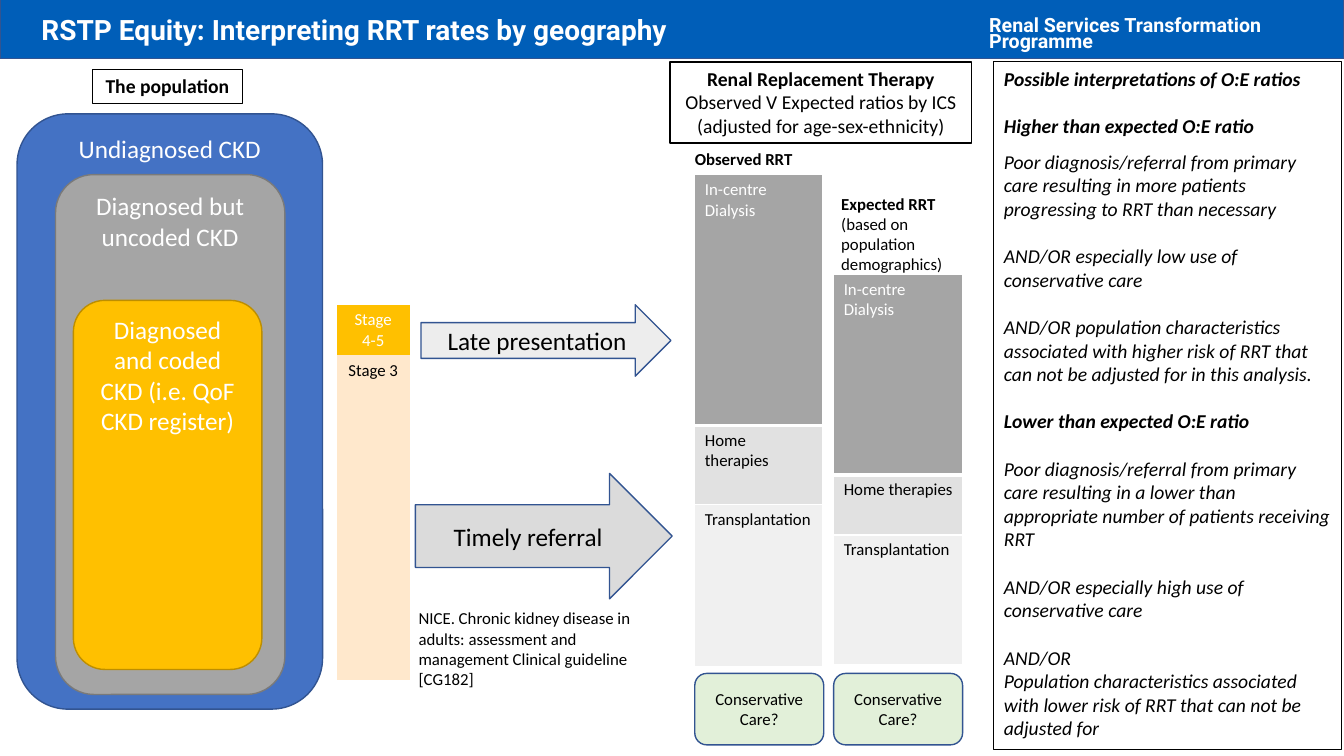
from lxml.etree import SubElement
from pptx import Presentation
from pptx.dml.color import RGBColor
from pptx.enum.shapes import MSO_SHAPE
from pptx.enum.text import MSO_ANCHOR, MSO_AUTO_SIZE, PP_ALIGN
from pptx.oxml.ns import qn
from pptx.util import Cm, Pt

WHITE = RGBColor(0xFF, 0xFF, 0xFF)
BLACK = RGBColor(0, 0, 0)
BAND = RGBColor(0x00, 0x5E, 0xB8)
NAVY = RGBColor(0x32, 0x54, 0x91)
BLUE = RGBColor(0x44, 0x72, 0xC4)
GREY = RGBColor(0xA5, 0xA5, 0xA5)
DARK = RGBColor(0x7A, 0x7A, 0x7A)
GOLD = RGBColor(0xFF, 0xC0, 0x00)
BROWN = RGBColor(0xBD, 0x8E, 0x00)
PEACH = RGBColor(0xFF, 0xE8, 0xCC)
SILVER = RGBColor(0xE1, 0xE1, 0xE1)
PALE = RGBColor(0xF0, 0xF0, 0xF0)
STEEL = RGBColor(0xDB, 0xDB, 0xDB)
MIST = RGBColor(0xED, 0xED, 0xED)
GREEN = RGBColor(0xE2, 0xF0, 0xD9)

LEFT, MID = PP_ALIGN.LEFT, PP_ALIGN.CENTER
TOP, MIDDLE = MSO_ANCHOR.TOP, MSO_ANCHOR.MIDDLE
RECT, ROUND, ARROW = MSO_SHAPE.RECTANGLE, MSO_SHAPE.ROUNDED_RECTANGLE, MSO_SHAPE.RIGHT_ARROW

NOTES = [
    ("Possible interpretations of O:E ratios", 0),
    ("Higher than expected O:E ratio", 17),
    ("Poor diagnosis/referral from primary care resulting in more patients "
     "progressing to RRT than necessary", 8.5),
    ("AND/OR especially low use of conservative care", 17),
    ("AND/OR population characteristics associated with higher risk of RRT "
     "that can not be adjusted for in this analysis.", 17),
    ("Lower than expected O:E ratio", 17),
    ("Poor diagnosis/referral from primary care resulting in a lower than "
     "appropriate number of patients receiving RRT", 17),
    ("AND/OR especially high use of conservative care", 17),
    ("AND/OR", 17),
    ("Population characteristics associated with lower risk of RRT "
     "that can not be adjusted for", 0),
]


class Board:
    """Holds the text style and the current slide, and draws on it."""

    def __init__(self, slide, face="Calibri"):
        self.slide = slide
        self.face = face

    def letter(self, frame, text, size, color, align=LEFT, bold=(), slant=False, face=None):
        """Fill a frame with text; bold lists the heavy paragraphs."""
        frame.text = text
        for i, para in enumerate(frame.paragraphs):
            para.alignment = align
            for run in para.runs:
                font = run.font
                font.name = face or self.face
                font.size = Pt(size)
                font.color.rgb = color
                font.bold = i in bold
                font.italic = slant

    def title(self, text, box):
        """Place and format the title."""
        shape = self.slide.shapes.title
        shape.left, shape.top, shape.width, shape.height = map(Cm, box)
        frame = shape.text_frame
        frame.auto_size = MSO_AUTO_SIZE.NONE
        frame.vertical_anchor = MIDDLE
        self.letter(frame, text, 20, WHITE, bold=[0], face="Roboto")
        return shape

    def shape(self, kind, box, fill, line, width=1, text="", size=14, color=BLACK,
              align=MID, anchor=TOP, **style):
        """Draw a preset shape with text."""
        shape = self.slide.shapes.add_shape(kind, *map(Cm, box))
        shape.shadow.inherit = False
        if fill is None:
            shape.fill.background()
        else:
            shape.fill.solid()
            shape.fill.fore_color.rgb = fill
        shape.line.color.rgb = line
        shape.line.width = Pt(width)
        if text:
            shape.text_frame.word_wrap = True
            shape.text_frame.vertical_anchor = anchor
            self.letter(shape.text_frame, text, size, color, align, **style)
        return shape

    def label(self, box, text, size=12, color=BLACK, **style):
        """Add a wrapped text box."""
        frame = self.slide.shapes.add_textbox(*map(Cm, box)).text_frame
        frame.word_wrap = True
        self.letter(frame, text, size, color, **style)
        return frame

    def edge(self, cell, side, width):
        """Set one cell border, white or none."""
        line = SubElement(cell._tc.get_or_add_tcPr(), qn("a:ln" + side), w=str(Pt(width)))
        if width:
            SubElement(SubElement(line, qn("a:solidFill")), qn("a:srgbClr"), val=str(WHITE))
        else:
            SubElement(line, qn("a:noFill"))

    def stack(self, left, top, width, rows, align=LEFT, rule=1, head=3):
        """Add a one-column table of (height, text, fill, colour) rows."""
        high = sum(row[0] for row in rows)
        table = self.slide.shapes.add_table(
            len(rows), 1, Cm(left), Cm(top), Cm(width), Cm(high)).table
        table.first_row = table.horz_banding = False
        for i, (height, text, fill, color) in enumerate(rows):
            table.rows[i].height = Cm(height)
            cell = table.cell(i, 0)
            for side in "LRTB":
                self.edge(cell, side, head if side == "B" and i == 0 else rule)
            cell.fill.solid()
            cell.fill.fore_color.rgb = fill
            self.letter(cell.text_frame, text, 12, color, align)


def main():
    """Build the slide and save it."""
    deck = Presentation()
    deck.slide_width, deck.slide_height = Cm(33.87), Cm(19.05)
    board = Board(deck.slides.add_slide(deck.slide_layouts[5]))

    title = board.title("RSTP Equity: Interpreting RRT rates by geography", (0.79, 0, 25.35, 1.48))
    band = board.shape(RECT, (0, -0.04, 33.87, 1.52), BAND, NAVY)
    title.element.addprevious(band.element)
    brand = board.label((24.68, 0.36, 9.52, 0.71), "Renal Services Transformation Programme",
                        14, WHITE, bold=[0], face="Roboto")
    brand.paragraphs[0].line_spacing = Pt(12)

    for box, fill, line, text in [
        ((0.43, 2.87, 7.7, 15), BLUE, NAVY, "Undiagnosed CKD"),
        ((1.4, 4.4, 5.78, 13.1), GREY, DARK, "Diagnosed but uncoded CKD"),
        ((1.85, 7.57, 4.75, 9.3), GOLD, BROWN, "Diagnosed and coded CKD (i.e. QoF CKD register)"),
    ]:
        board.shape(ROUND, box, fill, line, text=text, size=18, color=WHITE)

    board.stack(8.49, 7.68, 1.83, [(1.27, "Stage 4-5", GOLD, WHITE),
                                   (8.18, "Stage 3", PEACH, BLACK)], MID, 0, 0)

    parts = [("In-centre Dialysis", GREY, WHITE), ("Home therapies", SILVER, BLACK),
             ("Transplantation", PALE, BLACK)]
    for left, top, width, highs in [(17.51, 4.4, 3.22, (6.32, 2, 4.08)),
                                    (21.01, 6.91, 3.26, (5.06, 1.51, 3.27))]:
        board.stack(left, top, width, [(high, *part) for high, part in zip(highs, parts)])
        board.shape(ROUND, (left, 16.97, 3.25, 1.8), GREEN, NAVY,
                    text="Conservative Care?", size=12, anchor=MIDDLE)

    board.label((17.26, 3.63, 3.25, 0.77), "Observed RRT", bold=[0])
    board.label((20.95, 4.75, 3.3, 2.31),
                "Expected RRT\n(based on population demographics)", bold=[0])
    board.label((10.3, 15.2, 6.22, 2.31),
                "NICE. Chronic kidney disease in adults: assessment and management "
                "Clinical guideline [CG182]")

    for box, fill, text in [((10.47, 11.93, 6.47, 3.16), STEEL, "Timely referral"),
                            ((10.61, 7.68, 6.3, 1.8), MIST, "Late presentation")]:
        board.shape(ARROW, box, fill, NAVY, text=text, size=18, anchor=MIDDLE)

    board.shape(RECT, (2.33, 1.75, 3.78, 0.86), WHITE, BLACK, text="The population", bold=[0])
    board.shape(RECT, (16.89, 1.56, 7.6, 2.05), WHITE, BLACK, bold=[0],
                text="Renal Replacement Therapy\n"
                     "Observed V Expected ratios by ICS (adjusted for age-sex-ethnicity)")

    panel = board.shape(RECT, (25.05, 1.56, 8.75, 17.32), None, BLACK, 0.75,
                        "\n".join(text for text, gap in NOTES),
                        align=LEFT, bold=[0, 1, 5], slant=True)
    for para, (text, gap) in zip(panel.text_frame.paragraphs, NOTES):
        if gap:
            para.space_before = Pt(gap)

    deck.save("out.pptx")


if __name__ == "__main__":
    main()
